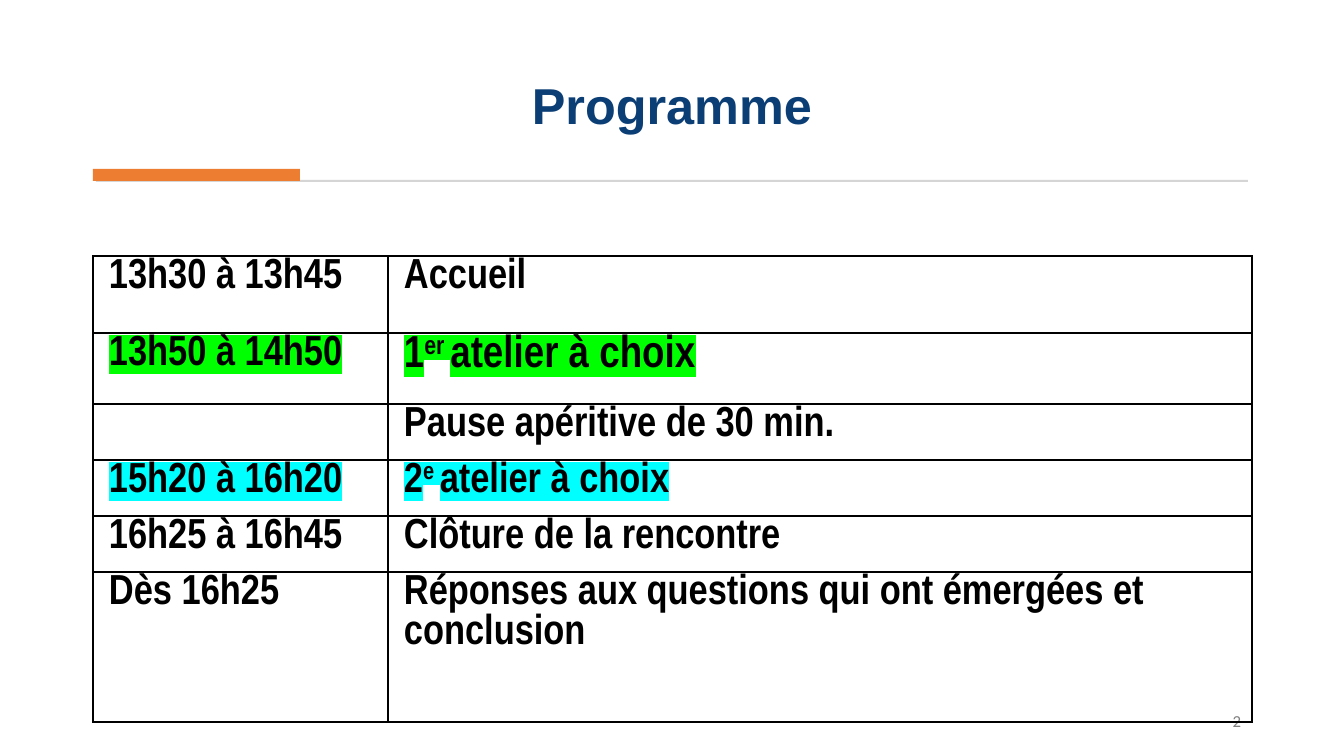
from lxml.etree import SubElement
from pptx import Presentation
from pptx.dml.color import RGBColor
from pptx.enum.shapes import MSO_SHAPE
from pptx.enum.text import MSO_ANCHOR, MSO_AUTO_SIZE, PP_ALIGN
from pptx.oxml import parse_xml
from pptx.oxml.ns import nsdecls, qn
from pptx.util import Pt

PX = 914400 / 100.8
COLORS = {
    "navy": "0B3E75", "orange": "ED7D31", "rule": "D5D5D5", "gray": "808080",
    "black": "000000", "green": "00FF00", "cyan": "00FFFF",
}
COLUMNS = [295, 864]
PROGRAMME = [
    (77, None, 30, "13h30 à 13h45", ["Accueil"]),
    (71, "green", 32, "13h50 à 14h50", ["1", "er ", "atelier à choix"]),
    (56, None, 30, "", ["Pause apéritive de 30 min."]),
    (56, "cyan", 30, "15h20 à 16h20", ["2", "e ", "atelier à choix"]),
    (56, None, 30, "16h25 à 16h45", ["Clôture de la rencontre"]),
    (150, None, 30, "Dès 16h25",
     ["Réponses aux questions qui ont émergées et conclusion"]),
]


def px(n):
    """Turn px into EMU."""
    return round(n * PX)


def box(*lengths):
    """Turn left, top, width and height in px into EMU."""
    return [px(n) for n in lengths]


def assign(obj, values):
    """Set each attribute of obj from a dict."""
    for name, value in values.items():
        setattr(obj, name, value)


def add_run(p, text, size, color, name, bold=True, highlight=None, raised=False):
    """Add a formatted run to a paragraph."""
    r = p.add_run()
    r.text = text
    assign(r.font, {"size": Pt(size), "bold": bold, "name": name})
    r.font.color.rgb = RGBColor.from_string(COLORS[color])
    rPr = r.font._element
    if highlight:
        rPr.find(qn("a:solidFill")).addnext(parse_xml(
            f'<a:highlight {nsdecls("a")}>'
            f'<a:srgbClr val="{COLORS[highlight]}"/></a:highlight>'))
    if raised:
        rPr.set("baseline", "30000")


def add_title(s, text):
    """Fill and place the title placeholder."""
    sp = s.shapes.title
    assign(sp, dict(zip(("left", "top", "width", "height"), box(93, 28, 1158, 112))))
    tf = sp.text_frame
    assign(tf, {"vertical_anchor": MSO_ANCHOR.BOTTOM, "word_wrap": True,
                "auto_size": MSO_AUTO_SIZE.NONE})
    p = tf.paragraphs[0]
    assign(p, {"alignment": PP_ALIGN.CENTER, "line_spacing": 0.9})
    add_run(p, text, 36, "navy", "Arial")


def add_bar(s, color, *lengths):
    """Add a plain filled rectangle."""
    sp = s.shapes.add_shape(MSO_SHAPE.RECTANGLE, *box(*lengths))
    sp.shadow.inherit = False
    sp.fill.solid()
    sp.fill.fore_color.rgb = RGBColor.from_string(COLORS[color])
    sp.line.fill.background()


def add_number(s, text):
    """Add the page number at the bottom right."""
    tf = s.shapes.add_textbox(*box(978, 701, 273, 40)).text_frame
    assign(tf, {"vertical_anchor": MSO_ANCHOR.MIDDLE, "word_wrap": True})
    p = tf.paragraphs[0]
    assign(p, {"alignment": PP_ALIGN.RIGHT, "space_after": Pt(6)})
    add_run(p, text, 12, "gray", "Calibri", bold=False)


def add_borders(cell):
    """Draw a thin line on all four sides of a cell."""
    tcPr = cell._tc.get_or_add_tcPr()
    for i, side in enumerate("LRTB"):
        ln = parse_xml(f'<a:ln{side} {nsdecls("a")} w="12700"/>')
        fill = SubElement(ln, qn("a:solidFill"))
        SubElement(fill, qn("a:srgbClr"), val=COLORS["black"])
        tcPr.insert(i, ln)


def fill_cell(cell, parts, size, highlight):
    """Format a cell and write its parts, the second one raised."""
    assign(cell, {"margin_left": px(16), "margin_top": px(2),
                  "margin_right": px(16), "margin_bottom": 0})
    cell.fill.background()
    add_borders(cell)
    p = cell.text_frame.paragraphs[0]
    assign(p, {"alignment": PP_ALIGN.LEFT, "space_after": Pt(6)})
    for i, part in enumerate(parts):
        add_run(p, part, size, "black", "Arial Narrow",
                highlight=highlight, raised=i == 1)


def add_programme(s):
    """Add the timetable."""
    height = sum(row[0] for row in PROGRAMME)
    table = s.shapes.add_table(len(PROGRAMME), len(COLUMNS),
                               *box(93, 256, sum(COLUMNS), height)).table
    assign(table, {"first_row": False, "horz_banding": False})
    for column, width in zip(table.columns, COLUMNS):
        column.width = px(width)
    for row, (height, highlight, size, time, parts) in zip(table.rows, PROGRAMME):
        row.height = px(height)
        fill_cell(row.cells[0], [time] if time else [], 30, highlight)
        fill_cell(row.cells[1], parts, size, highlight)


def main():
    """Build and save the slide."""
    prs = Presentation()
    assign(prs, {"slide_width": px(1344), "slide_height": px(756)})
    s = prs.slides.add_slide(prs.slide_layouts[5])
    add_title(s, "Programme")
    add_bar(s, "rule", 96, 180, 1152, 2)
    add_bar(s, "orange", 93, 169, 207, 12)
    add_number(s, "2")
    add_programme(s)
    prs.save("out.pptx")


if __name__ == "__main__":
    main()
